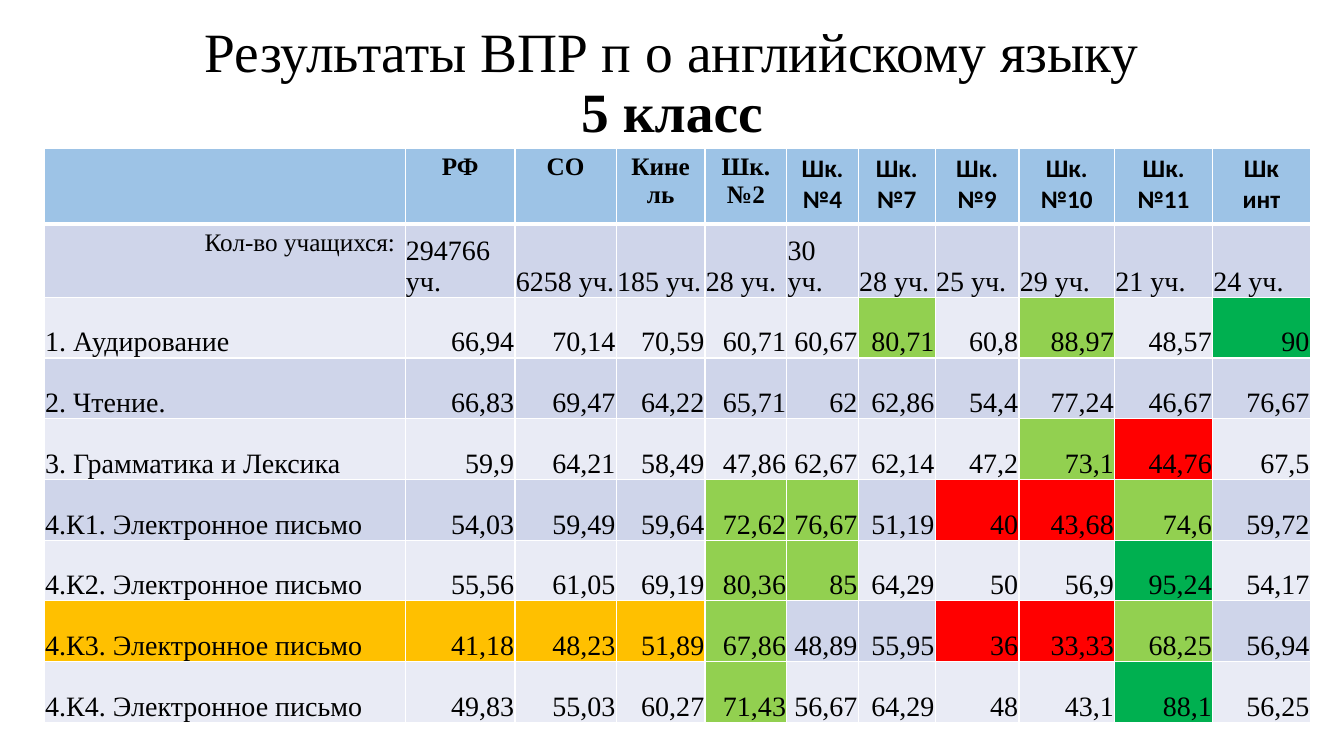
from lxml import etree
from pptx import Presentation
from pptx.dml.color import RGBColor
from pptx.enum.text import MSO_ANCHOR, PP_ALIGN
from pptx.oxml.ns import qn
from pptx.util import Cm, Pt

LEFT, CENTER, RIGHT = PP_ALIGN.LEFT, PP_ALIGN.CENTER, PP_ALIGN.RIGHT
TOP, MIDDLE, BOTTOM = MSO_ANCHOR.TOP, MSO_ANCHOR.MIDDLE, MSO_ANCHOR.BOTTOM
SERIF, SANS = "Times New Roman", "Calibri"

TITLE = "Результаты ВПР п о английскому языку"
GRADE = "5 класс"
HEADERS = ["", "РФ", "СО", "Кине\nль", "Шк.\n№2", "Шк.\n№4", "Шк.\n№7",
           "Шк.\n№9", "Шк.\n№10", "Шк.\n№11", "Шк\nинт"]
FIRST_SANS_COLUMN = 5
PUPILS_LABEL = "Кол-во учащихся:"
PUPILS = [294766, 6258, 185, 28, 30, 28, 25, 29, 21, 24]

# Skill, results, and one mark per column: g good, e excellent, r low, o attention
RESULTS = [
    ("1. Аудирование",
     "66,94 70,14 70,59 60,71 60,67 80,71 60,8 88,97 48,57 90", "......g.g.e"),
    ("2. Чтение.",
     "66,83 69,47 64,22 65,71 62 62,86 54,4 77,24 46,67 76,67", "..........."),
    ("3. Грамматика и Лексика",
     "59,9 64,21 58,49 47,86 62,67 62,14 47,2 73,1 44,76 67,5", "........gr."),
    ("4.К1. Электронное письмо",
     "54,03 59,49 59,64 72,62 76,67 51,19 40 43,68 74,6 59,72", "....gg.rrg."),
    ("4.К2. Электронное письмо",
     "55,56 61,05 69,19 80,36 85 64,29 50 56,9 95,24 54,17", "....gg...e."),
    ("4.К3. Электронное письмо",
     "41,18 48,23 51,89 67,86 48,89 55,95 36 33,33 68,25 56,94", "oooog..rrg."),
    ("4.К4. Электронное письмо",
     "49,83 55,03 60,27 71,43 56,67 64,29 48 43,1 88,1 56,25", "....g....e."),
]
RESULTS[5] = RESULTS[5][:2] + ("oooog..rrg.",)
MARK_FILLS = {"g": "92D050", "e": "00B050", "r": "FF0000", "o": "FFC000"}
HEADER_FILL, BAND_FILLS = "9DC3E6", ("CFD5EA", "E9EBF5")

COLUMN_WIDTHS = [9.09, 2.77, 2.55, 2.24, 2.06, 1.8, 1.94, 2.11, 2.41, 2.47, 2.46]
ROW_HEIGHTS = [1.9, 1.85] + [1.53] * len(RESULTS)
TABLE_LEFT, TABLE_TOP = 1.12, 3.74

HEADER_STYLE = {"size": Pt(18), "bold": True, "name": SERIF}
LABEL_STYLE = {"size": Pt(18), "bold": False, "name": SERIF}
BODY_STYLE = {"size": Pt(20), "bold": False, "name": SERIF}
TITLE_STYLE = {"size": Pt(39.6), "bold": False, "name": SERIF}
TIGHT_MARGINS = {"margin_left": Cm(0.02), "margin_right": Cm(0.02),
                 "margin_top": Cm(0.02), "margin_bottom": 0}


def color(hex_value):
    return RGBColor.from_string(hex_value)


def set_font(font, style):
    for name, value in style.items():
        setattr(font, name, value)
    font.color.rgb = color("000000")


def add_borders(cell, top, bottom):
    """Draw white borders; top and bottom are widths in points."""
    properties = cell._tc.get_or_add_tcPr()
    sides = [("lnL", 1), ("lnR", 1), ("lnT", top), ("lnB", bottom)]
    for position, (side, width) in enumerate(sides):
        line = etree.Element(qn(f"a:{side}"), w=str(Pt(width)))
        fill = etree.SubElement(line, qn("a:solidFill"))
        etree.SubElement(fill, qn("a:srgbClr"), val="FFFFFF")
        properties.insert(position, line)


def fill_cell(cell, text, style, alignment, anchor, fill, margins):
    cell.fill.solid()
    cell.fill.fore_color.rgb = color(fill)
    cell.vertical_anchor = anchor
    for name, value in margins.items():
        setattr(cell, name, value)
    cell.text = text
    for paragraph in cell.text_frame.paragraphs:
        paragraph.alignment = alignment
        set_font(paragraph.font, style)
        for run in paragraph.runs:
            set_font(run.font, style)


def add_title(slide):
    box = slide.shapes.add_textbox(Cm(2.33), Cm(0.51), Cm(29.21), Cm(3.25))
    frame = box.text_frame
    frame.word_wrap = True
    frame.vertical_anchor = MIDDLE
    paragraph = frame.paragraphs[0]
    paragraph.alignment = CENTER
    paragraph.line_spacing = 0.9
    first = paragraph.add_run()
    first.text = TITLE
    set_font(first.font, TITLE_STYLE)
    paragraph.add_line_break()
    second = paragraph.add_run()
    second.text = GRADE
    set_font(second.font, TITLE_STYLE | {"bold": True})


def add_results_table(slide):
    table = slide.shapes.add_table(
        len(ROW_HEIGHTS), len(COLUMN_WIDTHS), Cm(TABLE_LEFT), Cm(TABLE_TOP),
        Cm(sum(COLUMN_WIDTHS)), Cm(sum(ROW_HEIGHTS))).table
    for column, width in zip(table.columns, COLUMN_WIDTHS):
        column.width = Cm(width)
    for row, height in zip(table.rows, ROW_HEIGHTS):
        row.height = Cm(height)

    for column, header in enumerate(HEADERS):
        font = SANS if column >= FIRST_SANS_COLUMN else SERIF
        fill_cell(table.cell(0, column), header, HEADER_STYLE | {"name": font},
                  CENTER, TOP, HEADER_FILL, {})

    fill_cell(table.cell(1, 0), PUPILS_LABEL, LABEL_STYLE, RIGHT, TOP, BAND_FILLS[0], {})
    for column, count in enumerate(PUPILS, 1):
        fill_cell(table.cell(1, column), f"{count} уч.", BODY_STYLE,
                  LEFT, BOTTOM, BAND_FILLS[0], TIGHT_MARGINS)

    for row, (skill, scores, marks) in enumerate(RESULTS, 2):
        band = BAND_FILLS[(row - 1) % 2]
        for column, text in enumerate([skill] + scores.split()):
            fill_cell(table.cell(row, column), text, BODY_STYLE,
                      RIGHT if column else LEFT, BOTTOM,
                      MARK_FILLS.get(marks[column], band), TIGHT_MARGINS)

    for row in range(len(ROW_HEIGHTS)):
        for column in range(len(COLUMN_WIDTHS)):
            add_borders(table.cell(row, column),
                        top=3 if row == 1 else 1, bottom=3 if row == 0 else 1)


def main():
    presentation = Presentation()
    presentation.slide_width, presentation.slide_height = Cm(33.87), Cm(19.05)
    slide = presentation.slides.add_slide(presentation.slide_layouts[6])
    add_title(slide)
    add_results_table(slide)
    presentation.save("out.pptx")


if __name__ == "__main__":
    main()
